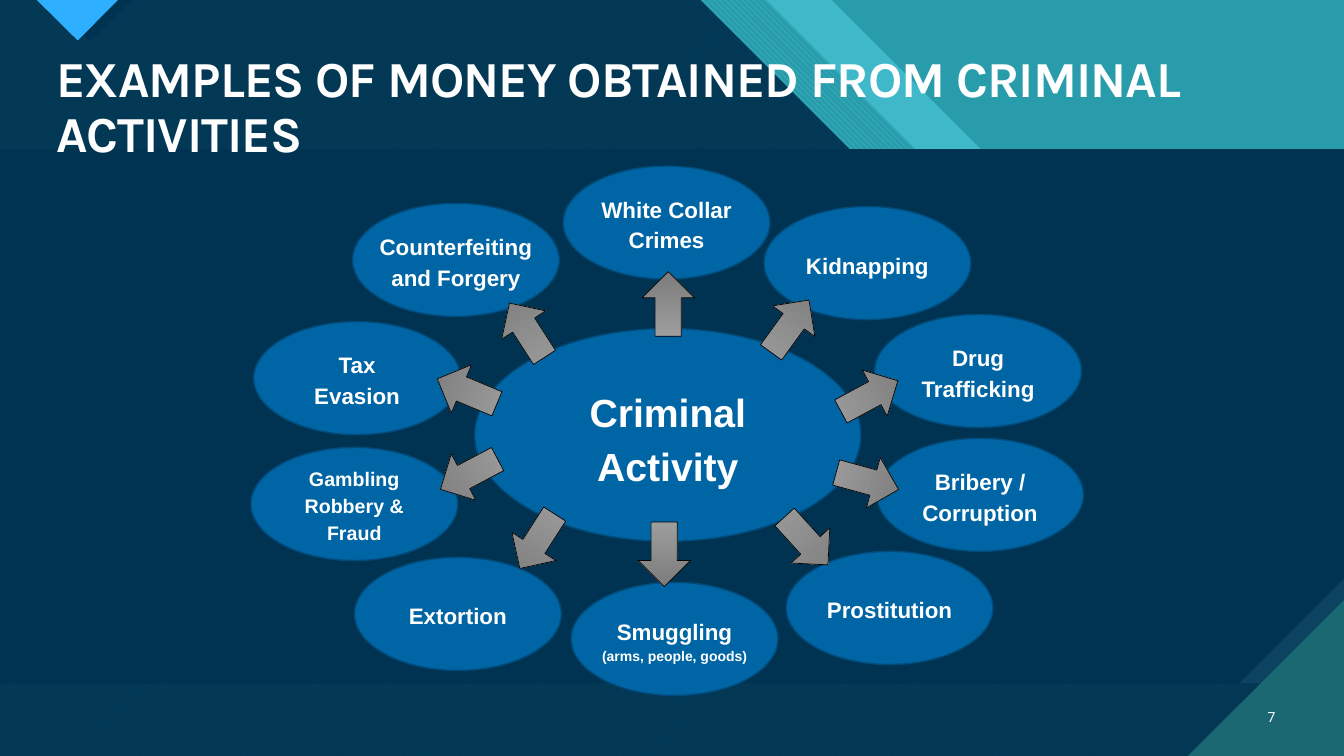
from dataclasses import dataclass

from pptx import Presentation
from pptx.dml.color import RGBColor
from pptx.dml.fill import FillFormat
from pptx.enum.dml import MSO_PATTERN as Pattern
from pptx.enum.shapes import MSO_SHAPE as Preset
from pptx.enum.text import MSO_ANCHOR as Anchor, PP_ALIGN as Align
from pptx.shapes.autoshape import Shape
from pptx.slide import Slide
from pptx.text.text import _Paragraph as Paragraph
from pptx.util import Cm, Pt

Point = tuple[float, float]


@dataclass(frozen=True)
class Theme:
    navy: str = "003352"
    header_stripe: str = "07415F"
    header_base: str = "033855"
    corner: str = "0C4360"
    teal: str = "299CAB"
    light_teal: str = "47C3D3"
    band: str = "3FB9C9"
    dark_teal: str = "1B6872"
    marker: str = "2FAFFF"
    oval: str = "0065A4"
    oval_edge: str = "004B79"
    arrow_light: str = "9D9D9D"
    arrow_dark: str = "7C7C7C"
    arrow_edge: str = "000000"
    text: str = "FFFFFF"
    title_font: str = "Karla"
    label_font: str = "Arial"
    number_font: str = "Roboto"
    title_size: float = 36
    hub_size: float = 28
    label_size: float = 16
    long_label_size: float = 14
    detail_size: float = 10
    number_size: float = 10


THEME = Theme()


@dataclass(frozen=True)
class Hatch:
    pattern: Pattern
    front: str
    back: str


@dataclass(frozen=True)
class Panel:
    corners: tuple[Point, ...]
    fill: str | Hatch


@dataclass(frozen=True)
class Crime:
    """One outer oval and the arrow that leads to it, both placed by their centres in cm."""
    label: str
    center: Point
    arrow_center: Point
    arrow_turn: float
    size: float = THEME.label_size
    detail: str = ""


SLIDE_W, SLIDE_H = 33.87, 19.05
PANEL_TOP, PANEL_BOTTOM = 3.76, 17.22
HUB_CENTER, HUB_SIZE = (16.83, 10.96), (9.73, 5.36)
OVAL_SIZE = (5.21, 2.85)
ARROW_SIZE = (1.32, 1.63)


def slanted_band(left: float, right: float) -> tuple[Point, ...]:
    """Corners of a header band whose sides run down at 45 degrees."""
    return ((left, 0), (right, 0), (right + PANEL_TOP, PANEL_TOP), (left + PANEL_TOP, PANEL_TOP))


PANELS = (
    Panel(slanted_band(19.3, 20.96), THEME.band),
    Panel(slanted_band(17.65, 19.3),
          Hatch(Pattern.WIDE_DOWNWARD_DIAGONAL, THEME.light_teal, THEME.teal)),
    Panel(((0, 0), (17.65, 0), (21.41, PANEL_TOP), (SLIDE_W, PANEL_TOP),
           (SLIDE_W, SLIDE_H), (0, SLIDE_H)),
          Hatch(Pattern.WIDE_UPWARD_DIAGONAL, THEME.header_stripe, THEME.header_base)),
    Panel(((1.22, 0), (3.33, 0), (2.27, 1.04)), THEME.navy),
    Panel(((0.93, 0), (2.97, 0), (1.96, 1.02)),
          Hatch(Pattern.DARK_HORIZONTAL, THEME.marker, THEME.dark_teal)),
    Panel(((SLIDE_W, 14.58), (SLIDE_W, PANEL_BOTTOM), (31.23, PANEL_BOTTOM)),
          Hatch(Pattern.DARK_VERTICAL, THEME.corner, THEME.dark_teal)),
    Panel(((0, PANEL_TOP), (SLIDE_W, PANEL_TOP), (SLIDE_W, 14.58),
           (31.23, PANEL_BOTTOM), (0, PANEL_BOTTOM)), THEME.navy),
    Panel(((29.95, SLIDE_H), (SLIDE_W, SLIDE_H), (SLIDE_W, 15.14)),
          Hatch(Pattern.DARK_HORIZONTAL, THEME.dark_teal, THEME.light_teal)),
)

CRIMES = (
    Crime("White Collar\vCrimes", (16.8, 5.61), (16.84, 7.66), 180),
    Crime("Kidnapping", (21.86, 6.63), (19.91, 8.22), 215.9),
    Crime("Drug\vTrafficking", (24.65, 9.35), (21.91, 9.98), 241.7),
    Crime("Bribery /\vCorruption", (24.7, 12.47), (21.86, 12.12), 285.3),
    Crime("Prostitution", (22.42, 15.32), (20.32, 13.63), 317.8),
    Crime("Smuggling", (17, 16.1), (16.74, 13.97), 0, detail="(arms, people, goods)"),
    Crime("Extortion", (11.54, 15.47), (13.54, 13.64), 32.6),
    Crime("Gambling\vRobbery &\vFraud", (8.93, 12.7), (11.82, 11.95), 62.1,
          THEME.long_label_size),
    Crime("Tax\vEvasion", (9, 9.53), (11.77, 9.86), 112.7),
    Crime("Counterfeiting\vand Forgery", (11.49, 6.55), (13.28, 8.32), 147.2),
)


def rgb(color: str) -> RGBColor:
    return RGBColor.from_string(color)


def paint(fill: FillFormat, look: str | Hatch) -> None:
    if isinstance(look, Hatch):
        fill.patterned()
        fill.pattern = look.pattern
        fill.fore_color.rgb = rgb(look.front)
        fill.back_color.rgb = rgb(look.back)
    else:
        fill.solid()
        fill.fore_color.rgb = rgb(look)


def style_text(paragraph: Paragraph, font_name: str, size: float, bold: bool) -> None:
    font = paragraph.font
    font.name, font.size, font.bold = font_name, Pt(size), bold
    font.color.rgb = rgb(THEME.text)


def draw_panel(slide: Slide, panel: Panel) -> None:
    points = [(Cm(x), Cm(y)) for x, y in panel.corners]
    builder = slide.shapes.build_freeform(*points[0])
    builder.add_line_segments(points[1:], close=True)
    area = builder.convert_to_shape()
    area.shadow.inherit = False
    paint(area.fill, panel.fill)
    area.line.fill.background()


def add_centered(slide: Slide, preset: Preset, center: Point, size: Point,
                 edge: str, edge_width: float) -> Shape:
    (x, y), (width, height) = center, size
    shape = slide.shapes.add_shape(preset, Cm(x - width / 2), Cm(y - height / 2),
                                   Cm(width), Cm(height))
    shape.shadow.inherit = False
    shape.line.color.rgb = rgb(edge)
    shape.line.width = Pt(edge_width)
    return shape


def draw_oval(slide: Slide, label: str, center: Point, size: Point,
              text_size: float, detail: str = "") -> None:
    oval = add_centered(slide, Preset.OVAL, center, size, THEME.oval_edge, 1)
    paint(oval.fill, THEME.oval)
    frame = oval.text_frame
    frame.word_wrap = False
    frame.vertical_anchor = Anchor.MIDDLE
    caption = frame.paragraphs[0]
    caption.text = label
    caption.alignment = Align.CENTER
    caption.line_spacing = 1.15
    style_text(caption, THEME.label_font, text_size, True)
    if detail:
        caption.add_line_break()
        note = caption.add_run()
        note.text = detail
        note.font.size = Pt(THEME.detail_size)


def draw_arrow(slide: Slide, crime: Crime) -> None:
    arrow = add_centered(slide, Preset.DOWN_ARROW, crime.arrow_center, ARROW_SIZE,
                         THEME.arrow_edge, 0.5)
    arrow.rotation = crime.arrow_turn
    arrow.fill.gradient()
    arrow.fill.gradient_angle = 270
    for stop, color in zip(arrow.fill.gradient_stops, (THEME.arrow_light, THEME.arrow_dark)):
        stop.color.rgb = rgb(color)


def draw_title(slide: Slide) -> None:
    box = slide.shapes.add_textbox(Cm(1.17), Cm(1.24), Cm(31.14), Cm(3.02))
    box.text_frame.word_wrap = True
    title = box.text_frame.paragraphs[0]
    title.text = "EXAMPLES OF MONEY OBTAINED FROM CRIMINAL ACTIVITIES"
    title.line_spacing = 0.9
    style_text(title, THEME.title_font, THEME.title_size, True)
    title.runs[0]._r.get_or_add_rPr().set("spc", "-70")


def draw_page_number(slide: Slide) -> None:
    box = slide.shapes.add_textbox(Cm(31.27), Cm(17.55), Cm(1.12), Cm(1.02))
    box.text_frame.word_wrap = True
    box.text_frame.vertical_anchor = Anchor.MIDDLE
    number = box.text_frame.paragraphs[0]
    number.text = "7"
    number.alignment = Align.RIGHT
    style_text(number, THEME.number_font, THEME.number_size, False)


def main() -> None:
    deck = Presentation()
    deck.slide_width, deck.slide_height = Cm(SLIDE_W), Cm(SLIDE_H)
    slide = deck.slides.add_slide(deck.slide_layouts[6])
    paint(slide.background.fill, THEME.teal)
    for panel in PANELS:
        draw_panel(slide, panel)
    draw_title(slide)
    draw_page_number(slide)
    draw_oval(slide, "Criminal\vActivity", HUB_CENTER, HUB_SIZE, THEME.hub_size)
    for crime in CRIMES:
        draw_oval(slide, crime.label, crime.center, OVAL_SIZE, crime.size, crime.detail)
    for crime in CRIMES:
        draw_arrow(slide, crime)
    deck.save("out.pptx")


if __name__ == "__main__":
    main()
